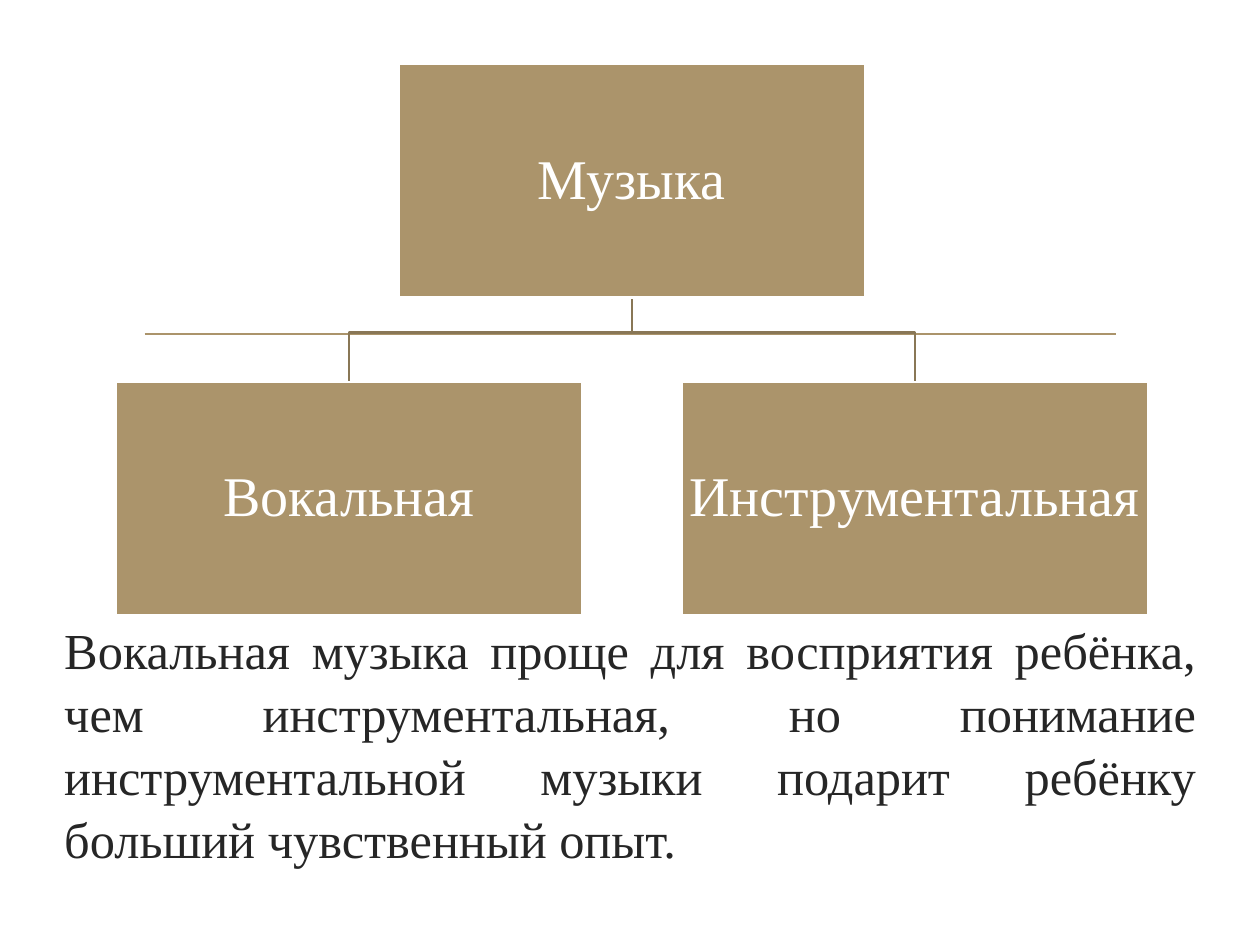
import pptx
import pptx.util
import pptx.dml.color
import pptx.enum.shapes
import pptx.enum.text
import pptx.oxml.ns
from lxml import etree

Pt = pptx.util.Pt
ALIGN = pptx.enum.text.PP_ALIGN

ROOT = "Музыка"
BRANCHES = ["Вокальная", "Инструментальная"]
SUMMARY = (
    "Вокальная музыка проще для восприятия ребёнка, чем инструментальная, "
    "но понимание инструментальной музыки подарит ребёнку больший "
    "чувственный опыт."
)
COLORS = {"box": "AB946B", "link": "897756", "white": "FFFFFF", "text": "262626"}
FONT = "Times New Roman"

BOX_W, BOX_H = 266.4, 133.2
LEFT, PITCH = 66.2, 323.3
ROOT_TOP, BRANCH_TOP = 36.8, 218.2
BEND_Y = 190.1
RULE_X1, RULE_X2, RULE_Y = 82.6, 637.9, 190.8
LINE_W = 1.25


def rgb(name):
    return pptx.dml.color.RGBColor.from_string(COLORS[name])


def set_line(sp, color):
    sp.line.color.rgb = rgb(color)
    sp.line.width = Pt(LINE_W)


def write(sp, text, *, size, color, align, inset_x, inset_y, spacing):
    tf = sp.text_frame
    tf.word_wrap = True
    tf.auto_size = pptx.enum.text.MSO_AUTO_SIZE.NONE
    tf.vertical_anchor = pptx.enum.text.MSO_ANCHOR.MIDDLE
    tf.margin_left = tf.margin_right = Pt(inset_x)
    tf.margin_top = tf.margin_bottom = Pt(inset_y)
    p = tf.paragraphs[0]
    p.alignment = align
    p.line_spacing = spacing
    r = p.add_run()
    r.text = text
    r.font.size = Pt(size)
    r.font.name = FONT
    r.font.color.rgb = rgb(color)


def add_rule(s):
    sp = s.shapes.add_connector(
        pptx.enum.shapes.MSO_CONNECTOR.STRAIGHT,
        Pt(RULE_X1), Pt(RULE_Y), Pt(RULE_X2), Pt(RULE_Y))
    set_line(sp, "box")
    etree.SubElement(sp._element.spPr, pptx.oxml.ns.qn("a:effectLst"))


def add_link(s, x1, x2):
    points = [(x1, BEND_Y), (x2, BEND_Y), (x2, BRANCH_TOP)]
    fb = s.shapes.build_freeform(Pt(x1), Pt(ROOT_TOP + BOX_H))
    fb.add_line_segments([(Pt(x), Pt(y)) for x, y in points], close=False)
    sp = fb.convert_to_shape()
    sp.shadow.inherit = False
    sp.fill.background()
    set_line(sp, "link")


def add_box(s, text, x, y):
    sp = s.shapes.add_shape(
        pptx.enum.shapes.MSO_SHAPE.RECTANGLE, Pt(x), Pt(y), Pt(BOX_W), Pt(BOX_H))
    sp.shadow.inherit = False
    sp.fill.solid()
    sp.fill.fore_color.rgb = rgb("box")
    set_line(sp, "white")
    write(sp, text, size=32, color="white", align=ALIGN.CENTER,
          inset_x=1.6, inset_y=1.6, spacing=0.9)


def main():
    prs = pptx.Presentation()
    prs.slide_width, prs.slide_height = Pt(720), Pt(540)
    s = prs.slides.add_slide(prs.slide_layouts[5])

    title = s.shapes.title
    title.left, title.top = Pt(29.5), Pt(349.2)
    title.width, title.height = Pt(661.7), Pt(150.5)
    write(title, SUMMARY, size=28.8, color="text", align=ALIGN.JUSTIFY,
          inset_x=7.2, inset_y=3.6, spacing=1.04)

    add_rule(s)
    branch_xs = [LEFT + i * PITCH for i in range(len(BRANCHES))]
    root_x = sum(branch_xs) / len(branch_xs)
    for x in reversed(branch_xs):
        add_link(s, root_x + BOX_W / 2, x + BOX_W / 2)
    add_box(s, ROOT, root_x, ROOT_TOP)
    for text, x in zip(BRANCHES, branch_xs):
        add_box(s, text, x, BRANCH_TOP)

    prs.save("out.pptx")


if __name__ == "__main__":
    main()
